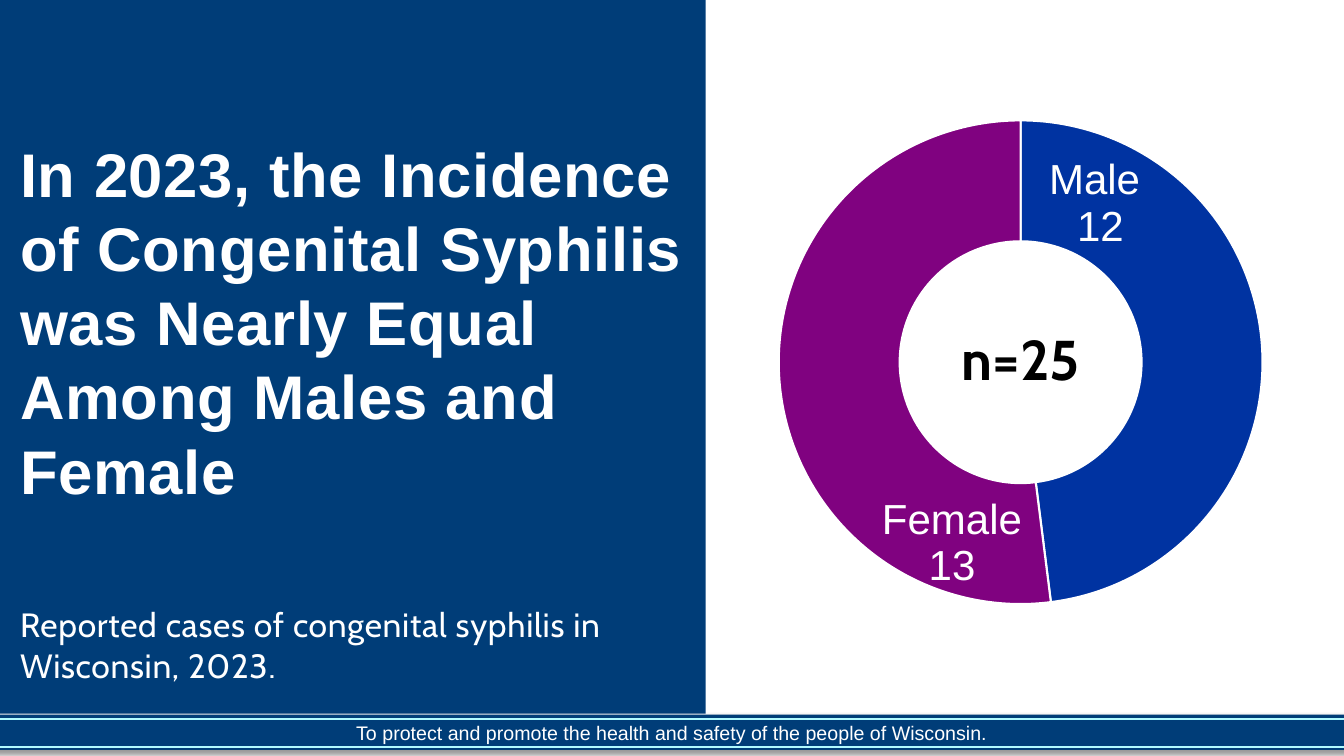
from lxml import etree
from pptx import Presentation
from pptx.chart.data import CategoryChartData
from pptx.dml.color import RGBColor
from pptx.enum.chart import XL_CHART_TYPE
from pptx.enum.shapes import MSO_CONNECTOR, MSO_SHAPE
from pptx.enum.text import MSO_ANCHOR, PP_ALIGN
from pptx.oxml import parse_xml
from pptx.oxml.ns import nsdecls, qn
from pptx.util import Inches, Pt

DOUGHNUT = XL_CHART_TYPE.DOUGHNUT
STRAIGHT = MSO_CONNECTOR.STRAIGHT
RECTANGLE = MSO_SHAPE.RECTANGLE
TOP, MIDDLE = MSO_ANCHOR.TOP, MSO_ANCHOR.MIDDLE
LEFT, CENTER = PP_ALIGN.LEFT, PP_ALIGN.CENTER

WIDTH, HEIGHT = Inches(13.33), Inches(7.5)
COLUMN, ROW = WIDTH / 100, HEIGHT / 100

COLORS = {
    "navy": "003D78",
    "stripe": "B0FAFF",
    "male": "0033A1",
    "female": "800280",
    "white": "FFFFFF",
    "black": "000000",
}

HEADLINE = ("In 2023, the Incidence of Congenital Syphilis was Nearly Equal "
            "Among Males and Female")
SUBTITLE = "Reported cases of congenital syphilis in Wisconsin, 2023."
MISSION = "To protect and promote the health and safety of the people of Wisconsin."
CASES = [
    ("Male ", 12, "male", (-0.18, -0.27)),
    ("Female", 13, "female", (0.2, 0.31)),
]


def color(name):
    return RGBColor.from_string(COLORS[name])


def grid(left, top, width, height):
    return (int(left * COLUMN), int(top * ROW),
            int(width * COLUMN), int(height * ROW))


def style(font, size, name, tint, bold=False):
    font.size, font.name, font.bold = Pt(size), name, bold
    font.color.rgb = color(tint)


def manual_layout(**settings):
    layout = parse_xml(f"<c:layout {nsdecls('c')}><c:manualLayout/></c:layout>")
    for key, value in settings.items():
        etree.SubElement(layout[0], qn(f"c:{key}")).set("val", str(value))
    return layout


def add_headline(slide):
    title = slide.shapes.title
    title.left, title.top, title.width, title.height = grid(0, 0, 52.5, 94.4)
    title.fill.solid()
    title.fill.fore_color.rgb = color("navy")
    frame = title.text_frame
    frame.word_wrap = True
    frame.vertical_anchor = TOP
    frame.margin_left, frame.margin_top = int(1.5 * COLUMN), int(17.9 * ROW)
    frame.margin_right = frame.margin_bottom = 0
    frame.text = f"{HEADLINE}\n{SUBTITLE}"
    headline, subtitle = frame.paragraphs
    for paragraph in (headline, subtitle):
        paragraph.alignment = LEFT
        paragraph.space_before = paragraph.space_after = Pt(0)
        for run in paragraph.runs:
            run.font._element.set("spc", "50")
    style(headline.font, 44, "Arial", "white", True)
    headline.line_spacing = Pt(53)
    style(subtitle.font, 24, "Cabin", "white")
    subtitle.line_spacing = 1.0
    subtitle.space_before = Pt(70)


def add_bar(slide, area):
    bar = slide.shapes.add_shape(RECTANGLE, *grid(*area))
    bar.fill.solid()
    bar.fill.fore_color.rgb = color("navy")
    bar.line.fill.background()
    bar._element.spPr.append(parse_xml(
        f'<a:effectLst {nsdecls("a")}><a:outerShdw blurRad="{Pt(4)}" '
        f'dist="{Pt(3)}" dir="2700000" algn="tl" rotWithShape="0">'
        f'<a:srgbClr val="{COLORS["black"]}"><a:alpha val="40000"/></a:srgbClr>'
        '</a:outerShdw></a:effectLst>'))


def add_stripe(slide, left, right, row):
    y = int(row * ROW)
    stripe = slide.shapes.add_connector(
        STRAIGHT, int(left * COLUMN), y, int(right * COLUMN), y)
    stripe.line.color.rgb = color("stripe")
    stripe.line.width = Pt(1.5)
    etree.SubElement(stripe._element.spPr, qn("a:effectLst"))


def add_label(slide, area, text, size, font, tint, bold=False):
    frame = slide.shapes.add_textbox(*grid(*area)).text_frame
    frame.word_wrap = True
    frame.vertical_anchor = MIDDLE
    frame.text = text
    paragraph = frame.paragraphs[0]
    paragraph.alignment = CENTER
    style(paragraph.font, size, font, tint, bold)


def add_doughnut(slide, area):
    data = CategoryChartData()
    data.categories = [sex for sex, *_ in CASES]
    data.add_series("Series 1", [count for _, count, *_ in CASES])
    chart = slide.shapes.add_chart(DOUGHNUT, *grid(*area), data).chart
    chart.has_legend = chart.has_title = False
    style(chart.font, 10, "Arial", "white")
    plot = chart.plots[0]
    plot.vary_by_categories = True
    cases = plot.series[0]
    cases.data_labels.show_value = True
    cases.data_labels.show_category_name = True
    style(cases.data_labels.font, 24, "Cabin", "white", True)
    for index, (sex, count, tint, (dx, dy)) in enumerate(CASES):
        point = cases.points[index]
        point.format.fill.solid()
        point.format.fill.fore_color.rgb = color(tint)
        point.format.line.color.rgb = color("white")
        point.format.line.width = Pt(1.5)
        frame = point.data_label.text_frame
        frame.text = f"{sex}\n{count}"
        for paragraph in frame.paragraphs:
            for run in paragraph.runs:
                style(run.font, 30, "Arial", "white")
        label = chart._chartSpace.xpath(".//c:dLbl")[index]
        label.insert(1, manual_layout(x=dx, y=dy))
        label.find(qn("c:showCatName")).set("val", "1")
    for hole in chart._chartSpace.xpath(".//c:holeSize"):
        hole.set("val", "49")
    plot_area = chart._chartSpace.xpath(".//c:plotArea")[0]
    for layout in plot_area.findall(qn("c:layout")):
        plot_area.remove(layout)
    plot_area.insert(0, manual_layout(
        layoutTarget="inner", xMode="edge", yMode="edge",
        x=0.13, y=0.05, w=0.86, h=0.92))


def main():
    deck = Presentation()
    deck.slide_width, deck.slide_height = WIDTH, HEIGHT
    slide = deck.slides.add_slide(deck.slide_layouts[5])
    footer = (-1, 94.53, 102, 4.67)
    add_bar(slide, footer)
    add_label(slide, footer, MISSION, 14, "Arial", "white")
    for row in (95.07, 98.8):
        add_stripe(slide, -1, 101, row)
    add_headline(slide)
    add_doughnut(slide, (52.5, 11.07, 41.86, 72.27))
    add_label(slide, (68.75, 42.27, 14.4, 10.27), "n=25", 40, "Cabin", "black", True)
    deck.save("out.pptx")


if __name__ == "__main__":
    main()
